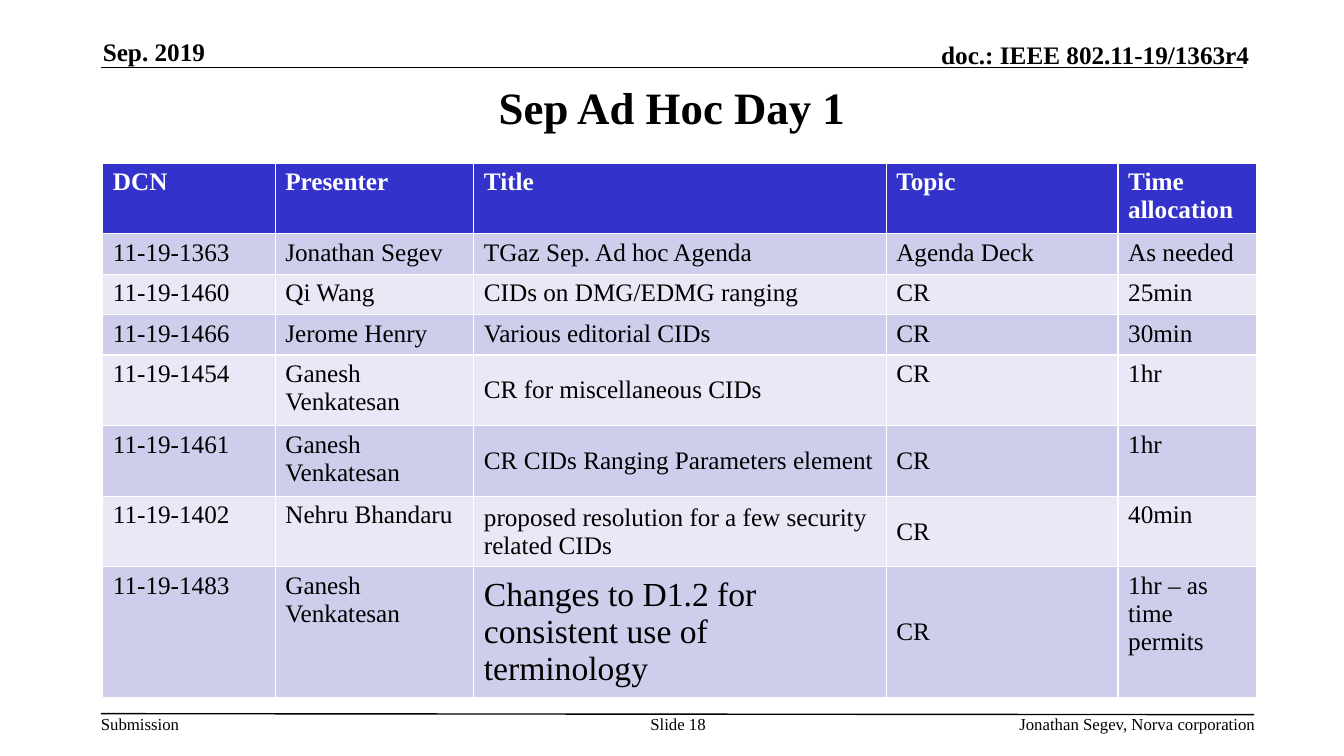
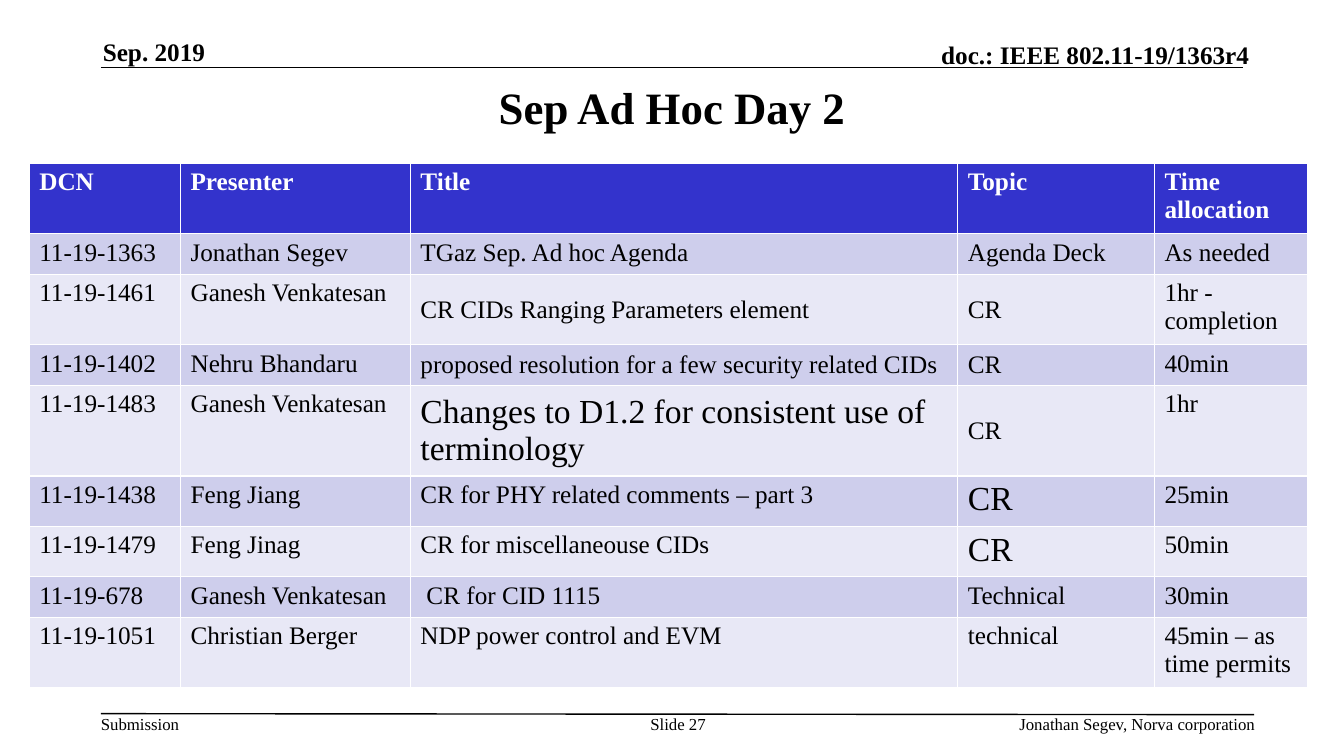
from lxml.etree import SubElement
from pptx import Presentation
from pptx.dml.color import RGBColor
from pptx.enum.shapes import MSO_CONNECTOR
from pptx.enum.text import MSO_ANCHOR, PP_ALIGN
from pptx.oxml.ns import qn
from pptx.util import Inches, Pt

BLACK = RGBColor(0x00, 0x00, 0x00)
WHITE = RGBColor(0xFF, 0xFF, 0xFF)
BLUE = RGBColor(0x33, 0x33, 0xCC)
BANDS = [RGBColor(0xE8, 0xE8, 0xF6), RGBColor(0xCE, 0xCE, 0xEC)]
FACE = "Times New Roman"
HEADS = ["DCN", "Presenter", "Title", "Topic", "Time allocation"]
LINE, PAIR = 0.37, 0.66

PAGES = [
    {
        "title": "Sep Ad Hoc Day 1",
        "number": 18,
        "left": 1.02,
        "widths": [1.71, 1.97, 4.09, 2.3, 1.37],
        "heights": [PAIR, LINE, LINE, LINE, PAIR, PAIR, PAIR, 1.2],
        "middle": {(4, 2), (5, 2), (5, 3), (6, 2), (6, 3), (7, 2), (7, 3)},
        "large": {(7, 2)},
        "indent": {},
        "rows": [
            ["11-19-1363", "Jonathan Segev", "TGaz Sep. Ad hoc Agenda", "Agenda Deck", "As needed"],
            ["11-19-1460", "Qi Wang", "CIDs on DMG/EDMG ranging", "CR", "25min"],
            ["11-19-1466", "Jerome Henry", "Various editorial CIDs", "CR", "30min"],
            ["11-19-1454", "Ganesh Venkatesan", "CR for miscellaneous CIDs", "CR", "1hr"],
            ["11-19-1461", "Ganesh Venkatesan", "CR CIDs Ranging Parameters element", "CR", "1hr"],
            ["11-19-1402", "Nehru Bhandaru",
             "proposed resolution for a few security related CIDs", "CR", "40min"],
            ["11-19-1483", "Ganesh Venkatesan",
             "Changes to D1.2 for consistent use of terminology", "CR", "1hr – as time permits"],
        ],
    },
    {
        "title": "Sep Ad Hoc Day 2",
        "number": 27,
        "left": 0.29,
        "widths": [1.5, 2.28, 5.43, 1.95, 1.52],
        "heights": [PAIR, LINE, PAIR, LINE, 0.84, 0.47, 0.47, LINE, PAIR],
        "middle": {(2, 2), (2, 3), (3, 2), (3, 3), (4, 2), (4, 3)},
        "large": {(4, 2), (5, 3), (6, 3)},
        "indent": {(7, 2): 0.16},
        "rows": [
            ["11-19-1363", "Jonathan Segev", "TGaz Sep. Ad hoc Agenda", "Agenda Deck", "As needed"],
            ["11-19-1461", "Ganesh Venkatesan", "CR CIDs Ranging Parameters element",
             "CR", "1hr - completion"],
            ["11-19-1402", "Nehru Bhandaru",
             "proposed resolution for a few security related CIDs", "CR", "40min"],
            ["11-19-1483", "Ganesh Venkatesan",
             "Changes to D1.2 for consistent use of terminology", "CR", "1hr"],
            ["11-19-1438", "Feng Jiang", "CR for PHY related comments – part 3", "CR", "25min"],
            ["11-19-1479", "Feng Jinag", "CR for miscellaneouse CIDs", "CR", "50min"],
            ["11-19-678", "Ganesh Venkatesan", "CR for CID 1115", "Technical", "30min"],
            ["11-19-1051", "Christian Berger", "NDP power control and EVM",
             "technical", "45min – as time permits"],
        ],
    },
]

RULES = [(1, 0.67, 12.33, 0.67), (1, 7.08, 12.44, 7.09)]


def write(frame, text, size, bold=False, color=BLACK, align=PP_ALIGN.LEFT):
    frame.text = text
    frame.word_wrap = True
    para = frame.paragraphs[0]
    para.alignment = align
    para.font.name = FACE
    para.font.size = Pt(size)
    para.font.bold = bold
    para.font.color.rgb = color


deck = Presentation()
deck.slide_width = Inches(13.33)
deck.slide_height = Inches(7.5)

for page in PAGES:
    slide = deck.slides.add_slide(deck.slide_layouts[5])
    shapes = slide.shapes

    for x1, y1, x2, y2 in RULES:
        rule = shapes.add_connector(
            MSO_CONNECTOR.STRAIGHT, Inches(x1), Inches(y1), Inches(x2), Inches(y2))
        rule.line.color.rgb = BLACK
        rule.line.width = Pt(1)
        SubElement(rule._element.spPr, qn("a:effectLst"))

    title = shapes.title
    title.left, title.top = Inches(1), Inches(0.75)
    title.width, title.height = Inches(11.33), Inches(0.61)
    title.text_frame.vertical_anchor = MSO_ANCHOR.MIDDLE
    write(title.text_frame, page["title"], 32, True, align=PP_ALIGN.CENTER)

    labels = [
        ("Sep. 2019", 1.02, 0.36, 2.73, 0.3, 18, PP_ALIGN.LEFT),
        ("doc.: IEEE 802.11-19/1363r4", 7.29, 0.39, 5.1, 0.3, 18, PP_ALIGN.RIGHT),
        ("Submission", 1, 7.08, 0.79, 0.2, 12, PP_ALIGN.LEFT),
        (f"Slide {page['number']}", 6.34, 7.08, 0.77, 0.4, 12, PP_ALIGN.CENTER),
        ("Jonathan Segev, Norva corporation", 7.81, 7.08, 4.64, 0.2, 12, PP_ALIGN.RIGHT),
    ]
    for text, left, top, width, height, size, align in labels:
        box = shapes.add_textbox(Inches(left), Inches(top), Inches(width), Inches(height))
        frame = box.text_frame
        frame.margin_left = frame.margin_right = 0
        frame.margin_top = frame.margin_bottom = 0
        header = size == 18
        frame.vertical_anchor = MSO_ANCHOR.BOTTOM if header else MSO_ANCHOR.TOP
        write(frame, text, size, header, align=align)

    rows = [HEADS] + page["rows"]
    table = shapes.add_table(
        len(rows), len(HEADS), Inches(page["left"]), Inches(1.62),
        Inches(sum(page["widths"])), Inches(sum(page["heights"]))).table
    table.horz_banding = False
    for column, width in zip(table.columns, page["widths"]):
        column.width = Inches(width)
    for r, row in enumerate(rows):
        table.rows[r].height = Inches(page["heights"][r])
        for c, text in enumerate(row):
            cell = table.cell(r, c)
            spot = (r, c)
            cell.fill.solid()
            cell.fill.fore_color.rgb = BANDS[r % 2] if r else BLUE
            cell.margin_left = Inches(page["indent"].get(spot, 0.1))
            cell.vertical_anchor = MSO_ANCHOR.MIDDLE if spot in page["middle"] else MSO_ANCHOR.TOP
            size = 24 if spot in page["large"] else 18
            write(cell.text_frame, text, size, r == 0, BLACK if r else WHITE)

deck.save("out.pptx")
